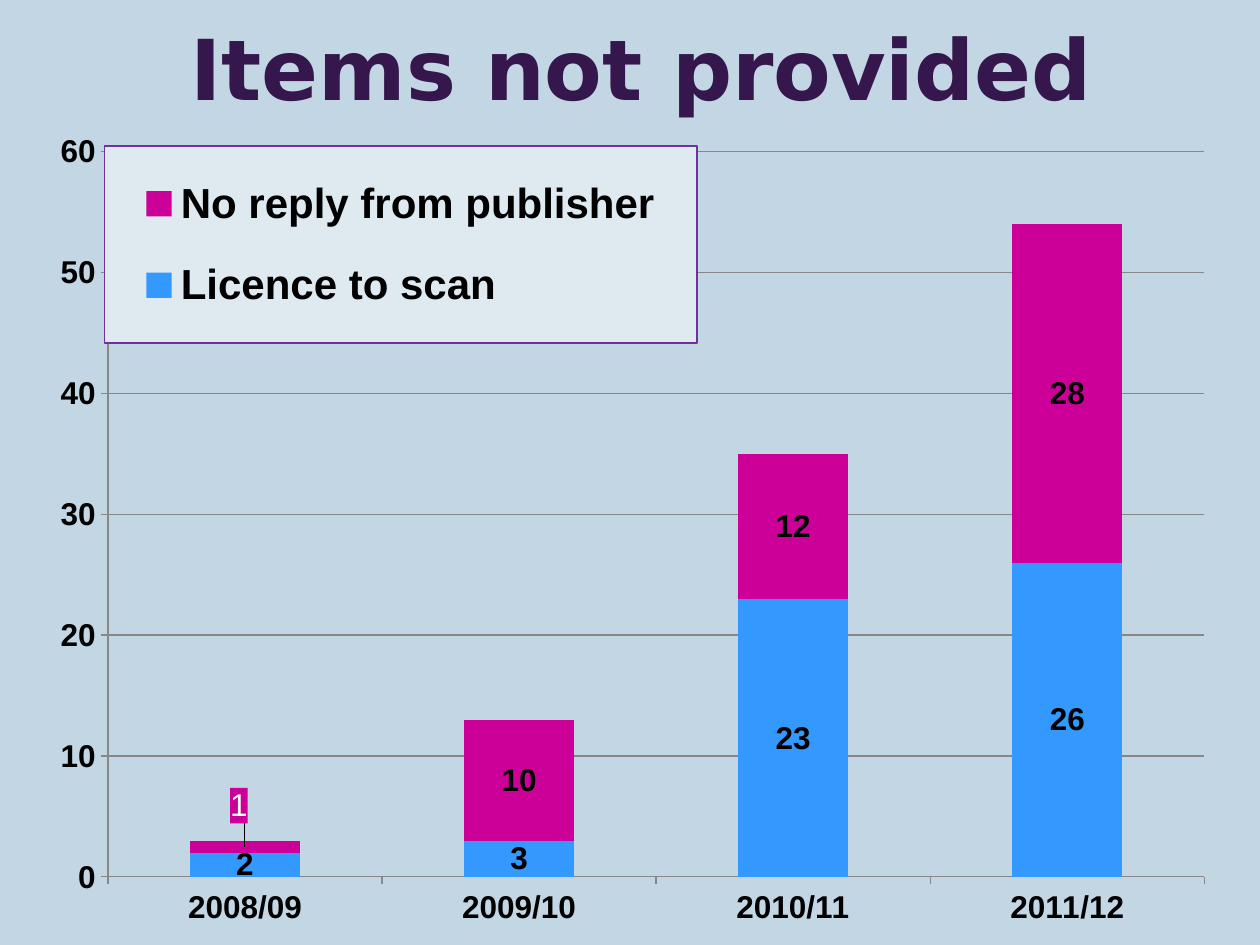
from pptx import Presentation
from pptx.chart.data import CategoryChartData
from pptx.dml.color import RGBColor
from pptx.enum.chart import (XL_CHART_TYPE as CT, XL_LABEL_POSITION as LP,
                             XL_LEGEND_POSITION as LG, XL_TICK_MARK as TM)
from pptx.enum.text import MSO_ANCHOR, PP_ALIGN
from pptx.oxml import parse_xml
from pptx.oxml.ns import nsdecls
from pptx.util import Inches, Pt

BLUE, PINK, GREY = "3399FF", "CC0099", "878787"


def rgb(value):
    return RGBColor.from_string(value)


def manual_layout(after=None, inner=False, edge=True, **places):
    """Layout element placing a chart part by fractions of the chart."""
    target = '<c:layoutTarget val="inner"/>' if inner else ""
    modes = '<c:xMode val="edge"/><c:yMode val="edge"/>' if edge else ""
    values = "".join(f'<c:{k} val="{v}"/>' for k, v in places.items())
    return parse_xml(f'<c:layout {nsdecls("c")}><c:manualLayout>{target}{modes}'
                     f'{values}</c:manualLayout></c:layout>')


def box_style(fill, line=None):
    """Shape properties for a filled chart part."""
    outline = (f'<a:ln w="9525"><a:solidFill><a:srgbClr val="{line}"/>'
               '</a:solidFill></a:ln>') if line else ""
    return parse_xml(f'<c:spPr {nsdecls("c", "a")}><a:solidFill>'
                     f'<a:srgbClr val="{fill}"/></a:solidFill>{outline}</c:spPr>')


def place(part, layout, index, style=None):
    """Give a chart part its layout and, before its text, its box style."""
    for old in part.xpath("c:layout"):
        part.remove(old)
    part.insert(index, layout)
    if style is not None:
        part.xpath("c:txPr")[0].addprevious(style)


class SlideBuilder:
    font, size = "Arial", 18

    def __init__(self, prs, background):
        self.s = prs.slides.add_slide(prs.slide_layouts[5])
        fill = self.s.background.fill
        fill.solid()
        fill.fore_color.rgb = rgb(background)

    def style(self, font, size=None, color="000000", bold=True, name=None):
        font.name, font.size = name or self.font, Pt(size or self.size)
        font.bold, font.color.rgb = bold, rgb(color)

    def title(self, text, x, y, w, h):
        sp = self.s.shapes.title
        sp.left, sp.top, sp.width, sp.height = map(Inches, (x, y, w, h))
        tf = sp.text_frame
        tf.text, tf.vertical_anchor = text, MSO_ANCHOR.MIDDLE
        p = tf.paragraphs[0]
        p.alignment = PP_ALIGN.CENTER
        self.style(p.font, 48, "36174D", name="DejaVu Sans")

    def stacked_chart(self, cats, series, x, y, w, h):
        data = CategoryChartData()
        data.categories = cats
        for name, values, _ in series:
            data.add_series(name, values)
        chart = self.s.shapes.add_chart(
            CT.COLUMN_STACKED, *map(Inches, (x, y, w, h)), data).chart
        chart.has_title = False
        self.style(chart.font, bold=False)
        plot = chart.plots[0]
        plot.gap_width, plot.overlap, plot.vary_by_categories = 150, 100, False
        for ser, (_, _, color) in zip(plot.series, series):
            ser.format.fill.solid()
            ser.format.fill.fore_color.rgb = rgb(color)
            ser.data_labels.show_value = True
            self.style(ser.data_labels.font)
        for axis in (chart.category_axis, chart.value_axis):
            axis.major_tick_mark, axis.minor_tick_mark = TM.OUTSIDE, TM.NONE
            axis.format.line.color.rgb = rgb(GREY)
            self.style(axis.tick_labels.font)
        axis = chart.value_axis
        axis.minimum_scale, axis.maximum_scale, axis.major_unit = 0, 60, 10
        axis.major_gridlines.format.line.color.rgb = rgb(GREY)
        place(chart.element.xpath("c:chart/c:plotArea")[0],
              manual_layout(inner=True, x=0.067, y=0.033, w=0.888, h=0.884), 0)
        return chart

    def legend(self, chart, fill, line, **places):
        chart.has_legend = True
        chart.legend.position = LG.RIGHT
        chart.legend.include_in_layout = False
        self.style(chart.legend.font, 24)
        place(chart.element.xpath("c:chart/c:legend")[0],
              manual_layout(**places), 1, box_style(fill, line))

    def callout_label(self, chart, series, point, fill, **shift):
        """Move one data label off its bar and fill its box."""
        ser = chart.plots[0].series[series]
        label = ser.points[point].data_label
        self.style(label.font, color="FFFFFF", bold=False)
        label.position = LP.CENTER
        place(chart.element.xpath(f"//c:ser[{series + 1}]//c:dLbl")[0],
              manual_layout(edge=False, **shift), 1, box_style(fill))


def main():
    prs = Presentation()
    prs.slide_width, prs.slide_height = Inches(10), Inches(7.5)
    b = SlideBuilder(prs, "C3D6E3")

    # Title
    b.title("Items not provided", 0.59, -0.01, 9, 1.09)

    # Chart with its legend and the raised label of the thinnest bar
    chart = b.stacked_chart(
        ["2008/09", "2009/10", "2010/11", "2011/12"],
        [("Licence to scan", (2, 3, 23, 26), BLUE),
         ("No reply from publisher", (1, 10, 12, 28), PINK)],
        0.2, 0.99, 9.8, 6.51)
    b.legend(chart, "DFE9F0", "7030A0", x=0.064, y=0.026, w=0.48, h=0.24)
    b.callout_label(chart, 1, 0, PINK, x=-0.005, y=-0.05)

    prs.save("out.pptx")


if __name__ == "__main__":
    main()
